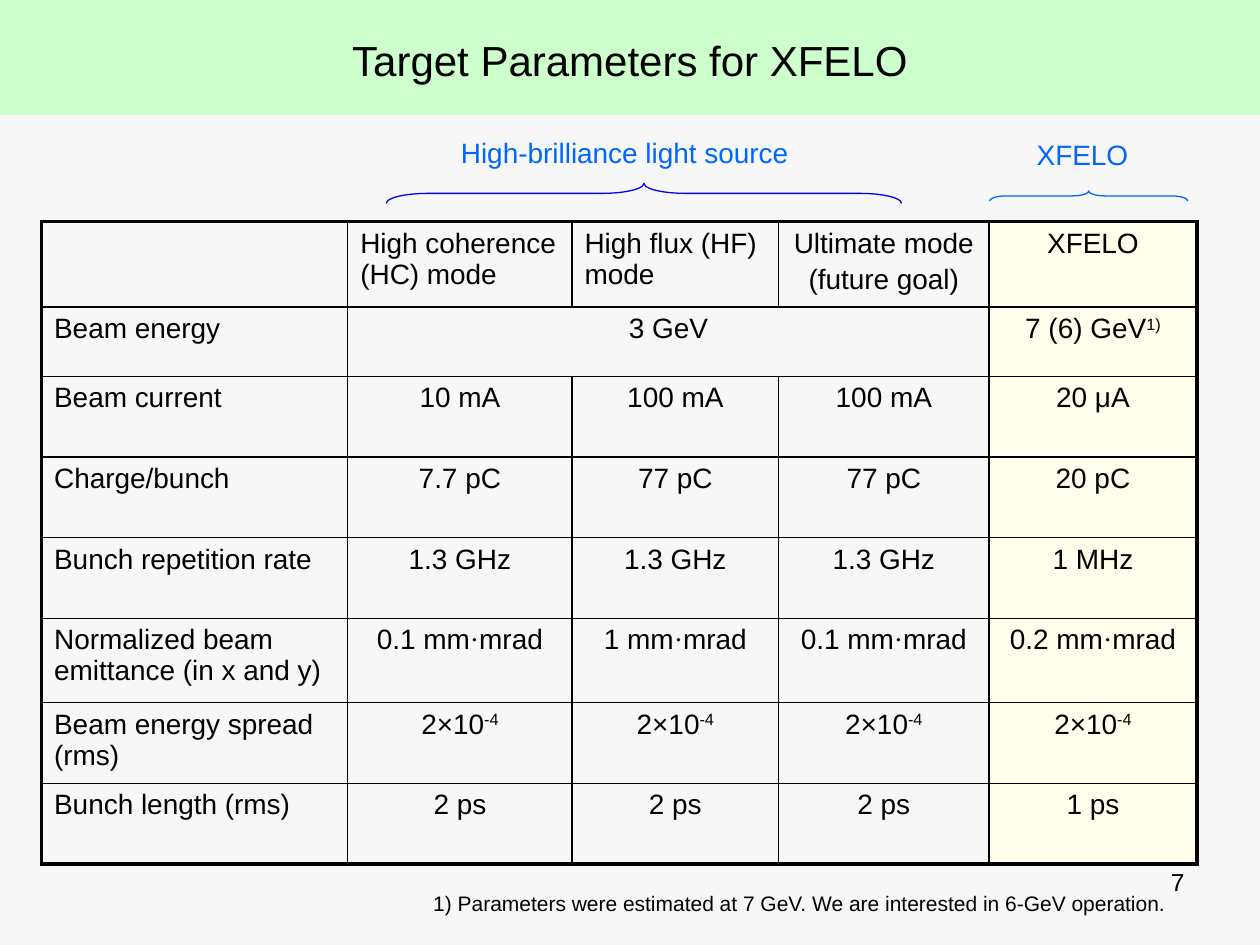
"""Builds the slide with the XFELO target parameter table."""
from pptx import Presentation
from pptx.dml.color import RGBColor
from pptx.enum.shapes import MSO_SHAPE as SHAPE
from pptx.enum.text import MSO_ANCHOR as ANCHOR, PP_ALIGN as ALIGN
from pptx.oxml import parse_xml
from pptx.oxml.ns import nsdecls
from pptx.util import Inches, Pt

BLACK = RGBColor(0x00, 0x00, 0x00)
BLUE = RGBColor(0x00, 0x00, 0xFF)
SKY = RGBColor(0x00, 0x66, 0xFF)
MINT = RGBColor(0xCC, 0xFF, 0xCC)
CREAM = RGBColor(0xFF, 0xFF, 0xEB)
PALE = RGBColor(0xF7, 0xF7, 0xF7)

COLS = [2.43, 1.78, 1.64, 1.67, 1.65]
ROWS = [0.65, 0.55, 0.64, 0.64, 0.64, 0.67, 0.64, 0.64]
SPREAD = "2×10^-4"
PARAMETERS = [
    ["", "High coherence (HC) mode", "High flux (HF) mode", "Ultimate mode\n(future goal)", "XFELO"],
    ["Beam energy", "3 GeV", "", "", "7 (6) GeV^1)"],
    ["Beam current", "10 mA", "100 mA", "100 mA", "20 μA"],
    ["Charge/bunch", "7.7 pC", "77 pC", "77 pC", "20 pC"],
    ["Bunch repetition rate", "1.3 GHz", "1.3 GHz", "1.3 GHz", "1 MHz"],
    ["Normalized beam emittance (in x and y)",
     "0.1 mm·mrad", "1 mm·mrad", "0.1 mm·mrad", "0.2 mm·mrad"],
    ["Beam energy spread (rms)"] + [SPREAD] * 4,
    ["Bunch length (rms)", "2 ps", "2 ps", "2 ps", "1 ps"],
]


class SlideBuilder:
    """Holds the text style and the current slide."""

    font = "Arial"
    symbol_font = "Times New Roman"
    body_size = 16

    def __init__(self, prs):
        self.slide = prs.slides.add_slide(prs.slide_layouts[6])
        self.slide.background.fill.solid()
        self.slide.background.fill.fore_color.rgb = PALE

    def style(self, r, size, color=BLACK):
        r.font.name = self.font
        r.font.size = Pt(size)
        r.font.color.rgb = color

    def band(self, x, y, w, h, color):
        sp = self.slide.shapes.add_shape(SHAPE.RECTANGLE, Inches(x), Inches(y), Inches(w), Inches(h))
        sp.shadow.inherit = False
        sp.fill.solid()
        sp.fill.fore_color.rgb = color
        sp.line.fill.background()

    def text(self, x, y, w, h, text, size, color=BLACK, align=ALIGN.LEFT, anchor=ANCHOR.TOP, wrap=True):
        box = self.slide.shapes.add_textbox(Inches(x), Inches(y), Inches(w), Inches(h))
        tf = box.text_frame
        tf.word_wrap = wrap
        tf.vertical_anchor = anchor
        tf.text = text
        p = tf.paragraphs[0]
        p.alignment = align
        self.style(p.runs[0], size, color)

    def brace(self, x, y, w, h, curve, color):
        sp = self.slide.shapes.add_shape(SHAPE.LEFT_BRACE, Inches(x), Inches(y), Inches(w), Inches(h))
        sp.rotation = 90
        sp.adjustments[0] = curve
        sp.shadow.inherit = False
        sp.fill.background()
        sp.line.color.rgb = color
        sp.line.width = Pt(0.75)

    def cell_text(self, cell, text, align):
        tf = cell.text_frame
        for i, line in enumerate(text.split("\n")):
            p = tf.add_paragraph() if i else tf.paragraphs[0]
            p.alignment = align
            if i:
                p.space_before = Pt(0.2 * self.body_size)
            for piece in line.replace("^", "|^").replace("·", "|·|").split("|"):
                r = p.add_run()
                r.text = piece.lstrip("^")
                self.style(r, self.body_size)
                if piece.startswith("^"):
                    r.font._element.set("baseline", "30000")
                if piece == "·":
                    r.font.name = self.symbol_font

    def borders(self, cell, outer):
        tc_pr = cell._tc.get_or_add_tcPr()
        for i, side in enumerate("LRTB"):
            width = Pt(2.25 if side in outer else 1)
            tc_pr.insert(i, parse_xml(
                f'<a:ln{side} {nsdecls("a")} w="{width}"><a:solidFill>'
                f'<a:srgbClr val="{BLACK}"/></a:solidFill></a:ln{side}>'))

    def table(self, x, y, cols, rows, data):
        last_row, last_col = len(rows) - 1, len(cols) - 1
        table = self.slide.shapes.add_table(
            len(rows), len(cols), Inches(x), Inches(y), Inches(sum(cols)), Inches(sum(rows))).table
        table.first_row = table.horz_banding = False
        for column, width in zip(table.columns, cols):
            column.width = Inches(width)
        for row, height in zip(table.rows, rows):
            row.height = Inches(height)
        for i, values in enumerate(data):
            for j, value in enumerate(values):
                cell = table.cell(i, j)
                if j == last_col:
                    cell.fill.solid()
                    cell.fill.fore_color.rgb = CREAM
                else:
                    cell.fill.background()
                left = j == 0 or (i == 0 and j < 3)
                if value:
                    self.cell_text(cell, value, ALIGN.LEFT if left else ALIGN.CENTER)
                edges = {"L": j == 0, "R": j == last_col, "T": i == 0, "B": i == last_row}
                self.borders(cell, [side for side, outer in edges.items() if outer])
        table.cell(1, 1).merge(table.cell(1, 3))


def main():
    prs = Presentation()
    prs.slide_width, prs.slide_height = Inches(10), Inches(7.5)
    s = SlideBuilder(prs)
    s.band(0, 0, 10, 0.91, MINT)
    s.text(7.17, 6.83, 2.33, 0.52, "7", 14, align=ALIGN.RIGHT)
    s.text(0.5, 0.13, 9, 0.69, "Target Parameters for XFELO", 24,
           align=ALIGN.CENTER, anchor=ANCHOR.MIDDLE)
    s.table(0.33, 1.76, COLS, ROWS, PARAMETERS)
    s.brace(5.03, -0.51, 0.16, 4.09, 2.07, BLUE)
    s.brace(8.6, 0.77, 0.08, 1.57, 1.58, SKY)
    s.text(3.56, 1.03, 3.28, 0.37, "High-brilliance light source", 16, SKY)
    s.text(8.13, 1.04, 1.13, 0.37, "XFELO", 16, SKY)
    s.text(3.34, 7.02, 6.03, 0.3,
           "1) Parameters were estimated at 7 GeV. We are interested in 6-GeV operation.", 12, wrap=False)
    prs.save("out.pptx")


if __name__ == "__main__":
    main()
